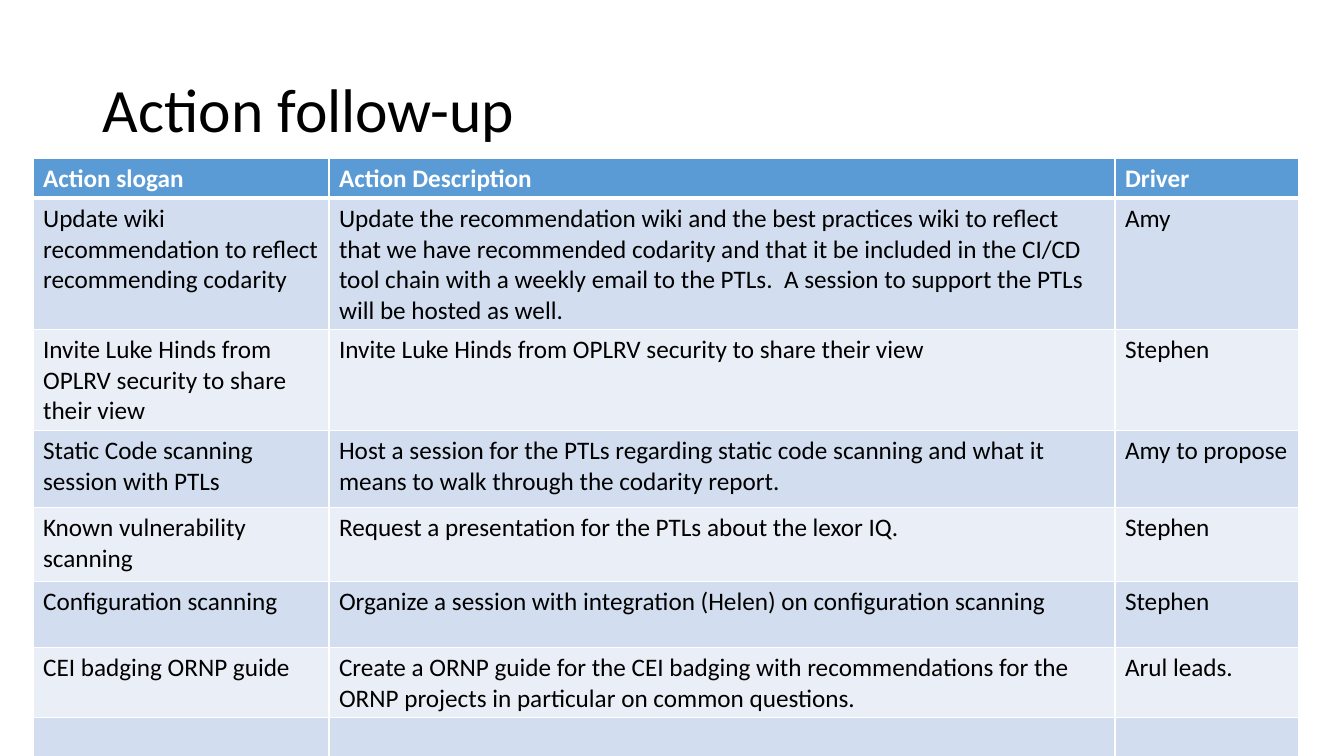
import pptx
import pptx.dml.color
import pptx.enum.text
import pptx.oxml
import pptx.oxml.ns
import pptx.util
from lxml import etree

TITLE = "Action follow-up"
HEADER = ("Action slogan", "Action Description", "Driver")
ACTIONS = [
    ("Update wiki recommendation to reflect recommending codarity",
     "Update the recommendation wiki and the best practices wiki to reflect that we have "
     "recommended codarity and that it be included in the CI/CD tool chain with a weekly "
     "email to the PTLs.  A session to support the PTLs will be hosted as well.",
     "Amy"),
    ("Invite Luke Hinds from OPLRV security to share their view",
     "Invite Luke Hinds from OPLRV security to share their view",
     "Stephen"),
    ("Static Code scanning session with PTLs",
     "Host a session for the PTLs regarding static code scanning and what it means to walk "
     "through the codarity report.",
     "Amy to propose"),
    ("Known vulnerability scanning",
     "Request a presentation for the PTLs about the lexor IQ.",
     "Stephen"),
    ("Configuration scanning",
     "Organize a session with integration (Helen) on configuration scanning",
     "Stephen"),
    ("CEI badging ORNP guide",
     "Create a ORNP guide for the CEI badging with recommendations for the ORNP projects in "
     "particular on common questions.",
     "Arul leads."),
    ("", "", ""),
]

EMU_PER_PX = 914400 / 100.8
TITLE_BOX = (93, 40, 1159, 146)
TABLE_LEFT, TABLE_TOP = 33, 158
COLUMN_WIDTHS = (296, 786, 184)
ROW_HEIGHTS = (38, 74, 79, 77, 74, 66, 66, 66)

BLACK = pptx.dml.color.RGBColor(0x00, 0x00, 0x00)
WHITE = pptx.dml.color.RGBColor(0xFF, 0xFF, 0xFF)
HEADER_BLUE = pptx.dml.color.RGBColor(0x5B, 0x9B, 0xD5)
BANDS = (pptx.dml.color.RGBColor(0xD2, 0xDE, 0xEF), pptx.dml.color.RGBColor(0xEA, 0xEF, 0xF7))


def px(length):
    return pptx.util.Emu(round(length * EMU_PER_PX))


def write(p, text, size, color, bold=False):
    r = p.add_run()
    r.text = text
    font = {"name": "Calibri", "size": pptx.util.Pt(size), "bold": bold}
    for name, value in font.items():
        setattr(r.font, name, value)
    r.font.color.rgb = color


def set_borders(cell, widths):
    """Draw white cell borders; widths maps L, R, T, B to points, in that order."""
    tcPr = cell._tc.get_or_add_tcPr()
    for position, (side, width) in enumerate(widths.items()):
        ln = etree.Element(pptx.oxml.ns.qn(f"a:ln{side}"), w=str(pptx.util.Pt(width)))
        fill = etree.SubElement(ln, pptx.oxml.ns.qn("a:solidFill"))
        etree.SubElement(fill, pptx.oxml.ns.qn("a:srgbClr"), val=str(WHITE))
        tcPr.insert(position, ln)


def add_title(s):
    tf = s.shapes.add_textbox(*map(px, TITLE_BOX)).text_frame
    tf.word_wrap = True
    tf.vertical_anchor = pptx.enum.text.MSO_ANCHOR.MIDDLE
    p = tf.paragraphs[0]
    p.line_spacing = 0.9
    write(p, TITLE, 44, BLACK)


def add_action_table(s):
    rows = [HEADER, *ACTIONS]
    frame = s.shapes.add_table(len(rows), len(HEADER), px(TABLE_LEFT), px(TABLE_TOP),
                               px(sum(COLUMN_WIDTHS)), px(sum(ROW_HEIGHTS)))
    table = frame.table
    for column, width in zip(table.columns, COLUMN_WIDTHS):
        column.width = px(width)
    for i, (row, height, texts) in enumerate(zip(table.rows, ROW_HEIGHTS, rows)):
        row.height = px(height)
        is_header = i == 0
        for cell, text in zip(row.cells, texts):
            cell.fill.solid()
            cell.fill.fore_color.rgb = HEADER_BLUE if is_header else BANDS[(i - 1) % 2]
            set_borders(cell, {"L": 1, "R": 1, "T": 3 if i == 1 else 1,
                               "B": 3 if is_header else 1})
            if text:
                write(cell.text_frame.paragraphs[0], text, 18,
                      WHITE if is_header else BLACK, is_header)


def main():
    prs = pptx.Presentation()
    prs.slide_width, prs.slide_height = px(1344), px(756)
    s = prs.slides.add_slide(prs.slide_layouts[6])
    add_title(s)
    add_action_table(s)
    prs.save("out.pptx")


if __name__ == "__main__":
    main()
